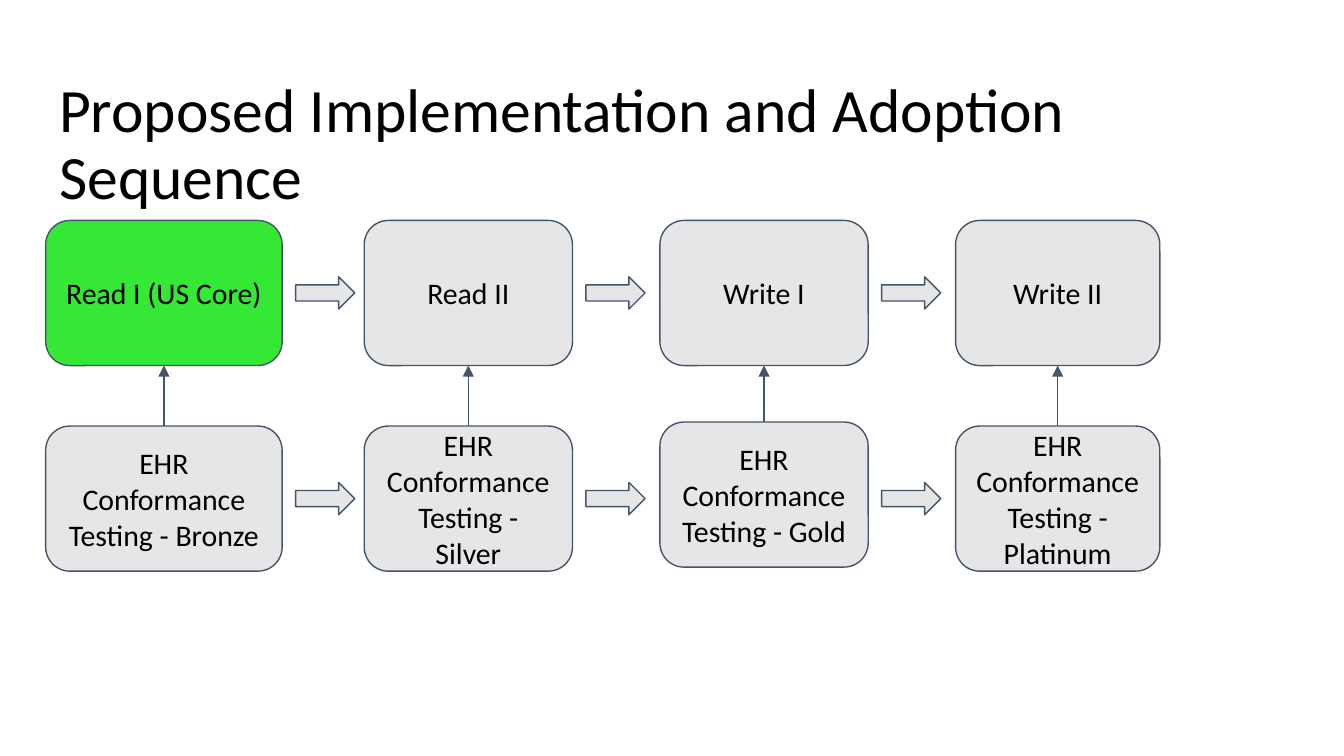
from lxml import etree
from pptx import Presentation
from pptx import util as u
from pptx.dml.color import RGBColor
from pptx.enum import shapes, text
from pptx.oxml import ns

COLORS = {"text": "000000", "line": "44546A", "box": "E7E6E6", "done": "00E200"}
FONT = "Calibri"
COLUMNS = [(0.34, 1.76), (2.71, 1.55), (4.91, 1.55), (7.11, 1.52)]
BOX_H = 1.08
STAGE_Y, TEST_Y = 1.64, 3.17
STAGES = ["Read I (US Core)", "Read II", "Write I", "Write II"]
LEVELS = ["Bronze", "Silver", "Gold", "Platinum"]


def rgb(name):
    return RGBColor.from_string(COLORS[name])


def set_font(p, size):
    p.font.name = FONT
    p.font.size = u.Pt(size)
    p.font.color.rgb = rgb("text")


def set_frame(tf, anchor):
    tf.word_wrap = True
    tf.auto_size = text.MSO_AUTO_SIZE.NONE
    tf.vertical_anchor = anchor
    tf.margin_left = tf.margin_right = u.Inches(0.1)
    tf.margin_top = tf.margin_bottom = u.Inches(0.1)


def add_title(slide, x, y, w, h):
    sp = slide.shapes.title
    sp.left, sp.top, sp.width, sp.height = map(u.Inches, (x, y, w, h))
    tf = sp.text_frame
    tf.text = "Proposed Implementation and Adoption Sequence"
    set_frame(tf, text.MSO_ANCHOR.TOP)
    p = tf.paragraphs[0]
    p.alignment = text.PP_ALIGN.LEFT
    p.line_spacing = 0.9
    set_font(p, 33)


def add_block(slide, kind, x, y, w, h):
    sp = slide.shapes.add_shape(kind, *map(u.Inches, (x, y, w, h)))
    sp.shadow.inherit = False
    sp.fill.solid()
    sp.fill.fore_color.rgb = rgb("box")
    sp.line.color.rgb = rgb("line")
    sp.line.width = u.Pt(0.75)
    return sp


def add_box(slide, label, x, y, w, h):
    sp = add_block(slide, shapes.MSO_SHAPE.ROUNDED_RECTANGLE, x, y, w, h)
    tf = sp.text_frame
    tf.text = label
    set_frame(tf, text.MSO_ANCHOR.MIDDLE)
    p = tf.paragraphs[0]
    p.alignment = text.PP_ALIGN.CENTER
    set_font(p, 16)
    return sp


def add_row(slide, labels, y, h, lifts=(0, 0, 0, 0)):
    boxes = [add_box(slide, label, x, y - lift, w, h)
             for label, (x, w), lift in zip(labels, COLUMNS, lifts)]
    for x, w in COLUMNS[:-1]:
        add_block(slide, shapes.MSO_SHAPE.RIGHT_ARROW,
                  x + w + 0.1, y + (h - 0.24) / 2, 0.44, 0.24)
    return boxes


def mark_done(sp):
    sp.fill.fore_color.rgb = rgb("done")
    color = sp.element.spPr.find(ns.qn("a:solidFill")).find(ns.qn("a:srgbClr"))
    etree.SubElement(color, ns.qn("a:alpha"), val="79000")


def connect_up(slide, lower, upper):
    x = lower.left + lower.width // 2
    cxn = slide.shapes.add_connector(
        shapes.MSO_CONNECTOR.STRAIGHT, x, lower.top, x, upper.top + upper.height)
    cxn.begin_connect(lower, 0)
    cxn.end_connect(upper, 2)
    cxn.line.color.rgb = rgb("line")
    cxn.line.width = u.Pt(0.75)
    props = cxn.element.spPr
    etree.SubElement(props.find(ns.qn("a:ln")), ns.qn("a:tailEnd"), type="triangle")
    etree.SubElement(props, ns.qn("a:effectLst"))


def main():
    prs = Presentation()
    prs.slide_width = u.Inches(10)
    prs.slide_height = prs.slide_width * 9 // 16
    slide = prs.slides.add_slide(prs.slide_layouts[5])
    add_title(slide, 0.34, 0.49, 9.32, 0.63)
    stages = add_row(slide, STAGES, STAGE_Y, BOX_H)
    mark_done(stages[0])
    tests = add_row(slide, [f"EHR Conformance Testing - {level}" for level in LEVELS],
                    TEST_Y, BOX_H, lifts=(0, 0, 0.03, 0))
    for test, stage in zip(tests, stages):
        connect_up(slide, test, stage)
    prs.save("out.pptx")


if __name__ == "__main__":
    main()
